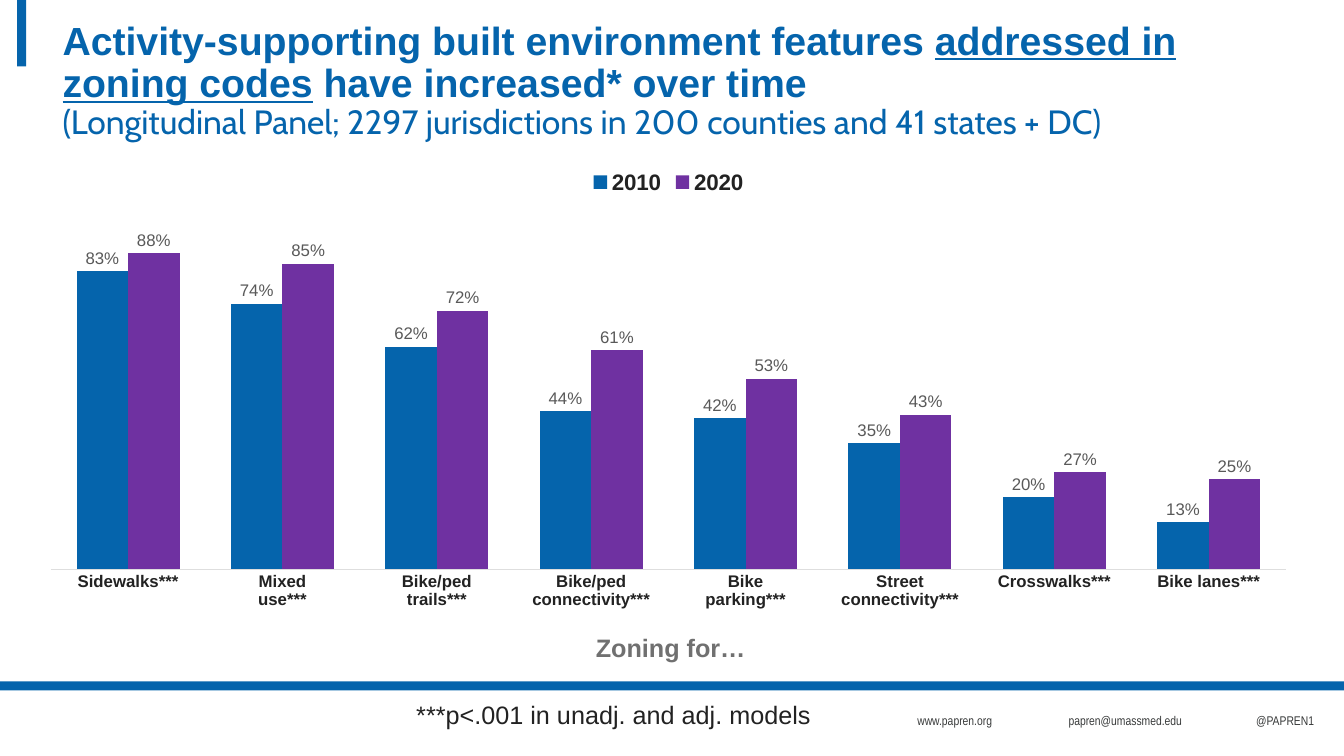
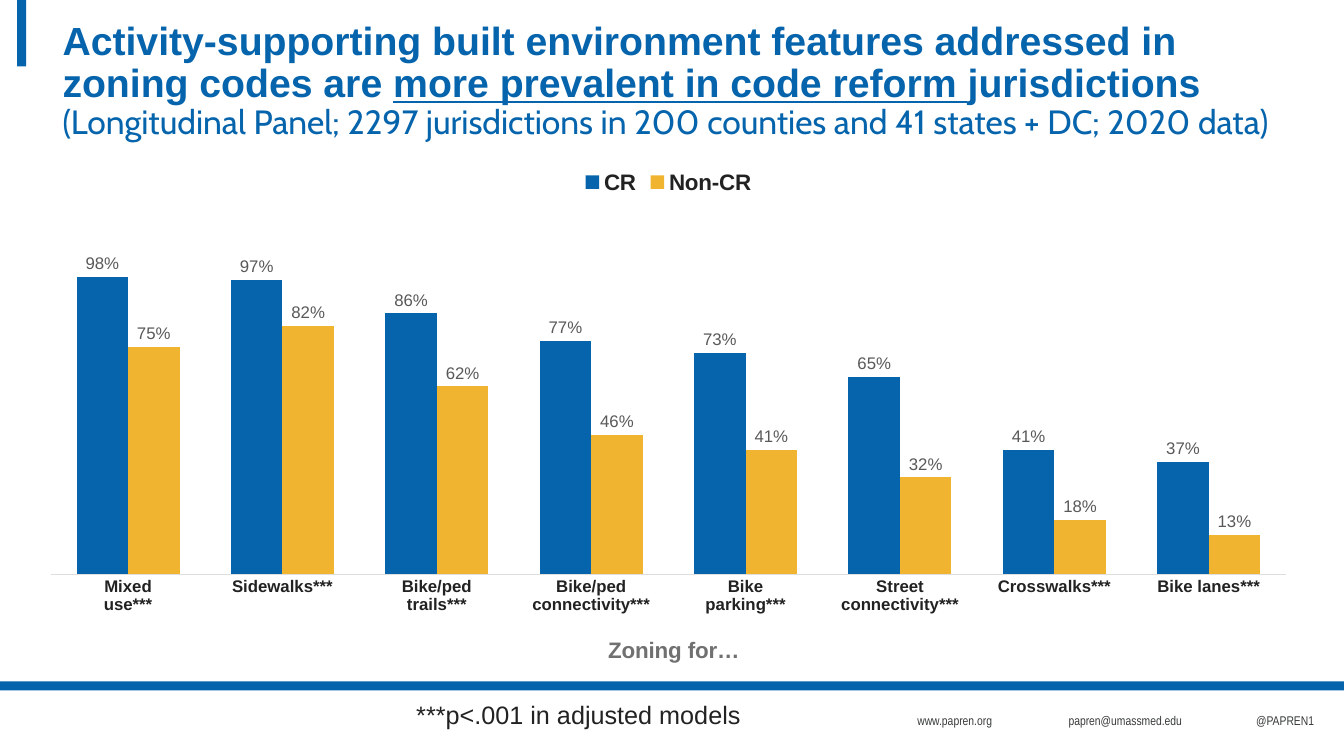
from dataclasses import dataclass
from typing import Any

from lxml import etree
from pptx import Presentation
from pptx.chart.axis import CategoryAxis
from pptx.chart.chart import Chart
from pptx.chart.data import CategoryChartData
from pptx.dml.color import RGBColor
from pptx.enum.chart import XL_CHART_TYPE, XL_LABEL_POSITION, XL_LEGEND_POSITION, XL_TICK_MARK
from pptx.enum.shapes import MSO_SHAPE
from pptx.enum.text import MSO_ANCHOR
from pptx.oxml.ns import qn
from pptx.slide import Slide
from pptx.util import Inches, Pt

RECTANGLE = MSO_SHAPE.RECTANGLE
CLUSTERED = XL_CHART_TYPE.COLUMN_CLUSTERED
OUTSIDE_END = XL_LABEL_POSITION.OUTSIDE_END
LEGEND_TOP = XL_LEGEND_POSITION.TOP
NO_TICK = XL_TICK_MARK.NONE
ANCHOR_TOP = MSO_ANCHOR.TOP

COLORS = {
    "blue": "0564AC", "purple": "6F31A1", "gold": "F1B431",
    "text": "222222", "footer": "383A3A", "label": "595959",
    "axis title": "707070", "axis line": "DEDEDE",
}

# Font formats: every key but "color" is an attribute of the font
HEADLINE = {"name": "Arial", "size": Pt(28), "bold": True, "color": "blue"}
UNDERLINED = {**HEADLINE, "underline": True}
SUBTITLE = {"name": "Cabin", "size": Pt(24), "bold": False, "color": "blue"}
NOTE = {"name": "Arial", "size": Pt(18), "color": "text"}
FOOTER = {"name": "Arial Narrow", "size": Pt(9), "color": "footer"}
CHART_TEXT = {"name": "Arial", "size": Pt(10), "color": "text"}
LEGEND = {"name": "Arial", "size": Pt(16), "bold": True, "color": "text"}
CATEGORY = {"name": "Arial", "size": Pt(12), "bold": True, "color": "text"}
DATA_LABEL = {"name": "Arial", "size": Pt(12), "bold": False, "color": "label"}
AXIS_TITLE = {"name": "Arial", "bold": True, "color": "axis title"}


@dataclass(frozen=True)
class Box:
    left: float
    top: float
    width: float
    height: float

    def lengths(self) -> list[int]:
        return [Inches(n) for n in (self.left, self.top, self.width, self.height)]


@dataclass(frozen=True)
class TextRun:
    text: str
    style: dict[str, Any]


@dataclass(frozen=True)
class Series:
    name: str
    color: str
    values: tuple[float, ...]


@dataclass(frozen=True)
class ChartSlide:
    title: tuple[TextRun, ...]
    note: str
    note_width: float
    categories: tuple[str, ...]
    series: tuple[Series, ...]
    axis_maximum: float
    plot_height: float
    axis_title_size: int
    axis_title_place: tuple[float, float]


BANDS = (Box(0, 6.76, 13.33, 0.09), Box(0.17, 0, 0.09, 0.66))
FOOTERS = (
    (Box(9, 7.02, 0.96, 0.25), "www.papren.org"),
    (Box(10.5, 7.02, 1.34, 0.25), "papren@umassmed.edu"),
    (Box(12.36, 7.02, 0.79, 0.25), "@PAPREN1"),
)
TITLE_BOX = Box(0.62, 0.21, 12.08, 0.89)
CHART_BOX = Box(0.25, 1.57, 12.76, 5.16)
SIDEWALKS, MIXED_USE = "Sidewalks***", "Mixed\nuse***"
OTHER_FEATURES = (
    "Bike/ped\ntrails***", "Bike/ped connectivity***", "Bike\nparking***",
    "Street connectivity***", "Crosswalks***", "Bike lanes***",
)

SLIDES = (
    ChartSlide(
        title=(
            TextRun("Activity-supporting built environment features ", HEADLINE),
            TextRun("addressed in zoning codes", UNDERLINED),
            TextRun(" have increased* over time", HEADLINE),
            TextRun("(Longitudinal Panel; 2297 jurisdictions in 200 counties and 41 states + DC)", SUBTITLE),
        ),
        note="***p<.001 in unadj. and adj. models",
        note_width=4.22,
        categories=(SIDEWALKS, MIXED_USE, *OTHER_FEATURES),
        series=(
            Series("2010", "blue", (0.83, 0.74, 0.62, 0.44, 0.42, 0.35, 0.2, 0.13)),
            Series("2020", "purple", (0.88, 0.85, 0.72, 0.61, 0.53, 0.43, 0.27, 0.25)),
        ),
        axis_maximum=1.0,
        plot_height=0.69,
        axis_title_size=18,
        axis_title_place=(0.44, 0.9),
    ),
    ChartSlide(
        title=(
            TextRun("Activity-supporting built environment features addressed in zoning codes are ", HEADLINE),
            TextRun("more prevalent in code reform ", UNDERLINED),
            TextRun("jurisdictions", HEADLINE),
            TextRun("(Longitudinal Panel; 2297 jurisdictions in 200 counties and 41 states + DC; 2020 data)", SUBTITLE),
        ),
        note="***p<.001 in adjusted models",
        note_width=3.45,
        categories=(MIXED_USE, SIDEWALKS, *OTHER_FEATURES),
        series=(
            Series("CR", "blue", (0.98, 0.97, 0.86, 0.77, 0.73, 0.65, 0.41, 0.37)),
            Series("Non-CR", "gold", (0.75, 0.82, 0.62, 0.46, 0.41, 0.32, 0.18, 0.13)),
        ),
        axis_maximum=1.2,
        plot_height=0.7,
        axis_title_size=16,
        axis_title_place=(0.45, 0.91),
    ),
)


def color(name: str) -> RGBColor:
    return RGBColor.from_string(COLORS[name])


def apply_font(font: Any, style: dict[str, Any]) -> None:
    for attribute, value in style.items():
        if attribute == "color":
            font.color.rgb = color(value)
        else:
            setattr(font, attribute, value)


def add_band(slide: Slide, box: Box) -> None:
    shape = slide.shapes.add_shape(RECTANGLE, *box.lengths())
    shape.shadow.inherit = False
    shape.fill.solid()
    shape.fill.fore_color.rgb = color("blue")
    shape.line.fill.background()


def add_line_of_text(slide: Slide, box: Box, text: str, style: dict[str, Any]) -> None:
    frame = slide.shapes.add_textbox(*box.lengths()).text_frame
    frame.word_wrap = False
    run = frame.paragraphs[0].add_run()
    run.text = text
    apply_font(run.font, style)


def add_title(slide: Slide, runs: tuple[TextRun, ...]) -> None:
    frame = slide.shapes.add_textbox(*TITLE_BOX.lengths()).text_frame
    frame.word_wrap = True
    frame.vertical_anchor = ANCHOR_TOP
    for side in ("left", "top", "right", "bottom"):
        setattr(frame, f"margin_{side}", 0)
    paragraph = frame.paragraphs[0]
    paragraph.line_spacing = 0.9
    for text_run in runs:
        if text_run.style is SUBTITLE:
            paragraph.add_line_break()
        run = paragraph.add_run()
        run.text = text_run.text
        apply_font(run.font, text_run.style)


def manual_layout(**values: Any) -> Any:
    """Build a chart layout; places and sizes are fractions of the chart."""
    layout = etree.Element(qn("c:layout"))
    manual = etree.SubElement(layout, qn("c:manualLayout"))
    for tag, value in values.items():
        etree.SubElement(manual, qn(f"c:{tag}")).set("val", str(value))
    return layout


def place_after(parent: Any, previous: Any, layout: Any) -> None:
    for old_layout in parent.findall(qn("c:layout")):
        parent.remove(old_layout)
    if previous is None:
        parent.insert(0, layout)
    else:
        previous.addnext(layout)


def format_category_axis(axis: CategoryAxis, content: ChartSlide) -> None:
    axis.major_tick_mark = axis.minor_tick_mark = NO_TICK
    axis.format.line.color.rgb = color("axis line")
    axis.format.line.width = Pt(0.75)
    apply_font(axis.tick_labels.font, CATEGORY)
    title = axis.axis_title
    run = title.text_frame.paragraphs[0].add_run()
    run.text = "Zoning for…"
    apply_font(run.font, {**AXIS_TITLE, "size": Pt(content.axis_title_size)})
    left, top = content.axis_title_place
    element = title.text_frame._txBody.getparent().getparent()
    place_after(element, element.find(qn("c:tx")),
                manual_layout(xMode="edge", yMode="edge", x=left, y=top))


def format_series(chart: Chart, content: ChartSlide) -> None:
    plot = chart.plots[0]
    plot.gap_width = 100
    plot.overlap = 0
    plot.vary_by_categories = False
    for drawn, series in zip(plot.series, content.series):
        drawn.format.fill.solid()
        drawn.format.fill.fore_color.rgb = color(series.color)
        drawn.invert_if_negative = False
        labels = drawn.data_labels
        label_format = {"show_value": True, "position": OUTSIDE_END,
                        "number_format": "0%", "number_format_is_linked": False}
        for attribute, value in label_format.items():
            setattr(labels, attribute, value)
        apply_font(labels.font, DATA_LABEL)


def add_column_chart(slide: Slide, content: ChartSlide) -> None:
    data = CategoryChartData(number_format="0%")
    data.categories = content.categories
    for series in content.series:
        data.add_series(series.name, series.values)
    chart = slide.shapes.add_chart(CLUSTERED, *CHART_BOX.lengths(), data).chart
    apply_font(chart.font, CHART_TEXT)
    chart.has_title = False
    chart.has_legend = True
    chart.legend.position = LEGEND_TOP
    chart.legend.include_in_layout = False
    apply_font(chart.legend.font, LEGEND)
    format_category_axis(chart.category_axis, content)
    axis_format = {"minimum_scale": 0, "maximum_scale": content.axis_maximum,
                   "has_major_gridlines": False, "visible": False}
    for attribute, value in axis_format.items():
        setattr(chart.value_axis, attribute, value)
    format_series(chart, content)
    plot_area = chart.element.find(f".//{qn('c:plotArea')}")
    place_after(plot_area, None, manual_layout(
        layoutTarget="inner", xMode="edge", yMode="edge",
        x=0.02, y=0.1, w=0.96, h=content.plot_height))


def add_slide(presentation: Any, content: ChartSlide) -> None:
    slide = presentation.slides.add_slide(presentation.slide_layouts[6])
    # Bands and footers
    for box in BANDS:
        add_band(slide, box)
    for box, text in FOOTERS:
        add_line_of_text(slide, box, text, FOOTER)
    # Chart, title and significance note
    add_column_chart(slide, content)
    add_title(slide, content.title)
    add_line_of_text(slide, Box(4.03, 6.89, content.note_width, 0.4), content.note, NOTE)


def main() -> None:
    presentation = Presentation()
    presentation.slide_width = Inches(13.33)
    presentation.slide_height = Inches(7.5)
    for content in SLIDES:
        add_slide(presentation, content)
    presentation.save("out.pptx")


if __name__ == "__main__":
    main()
